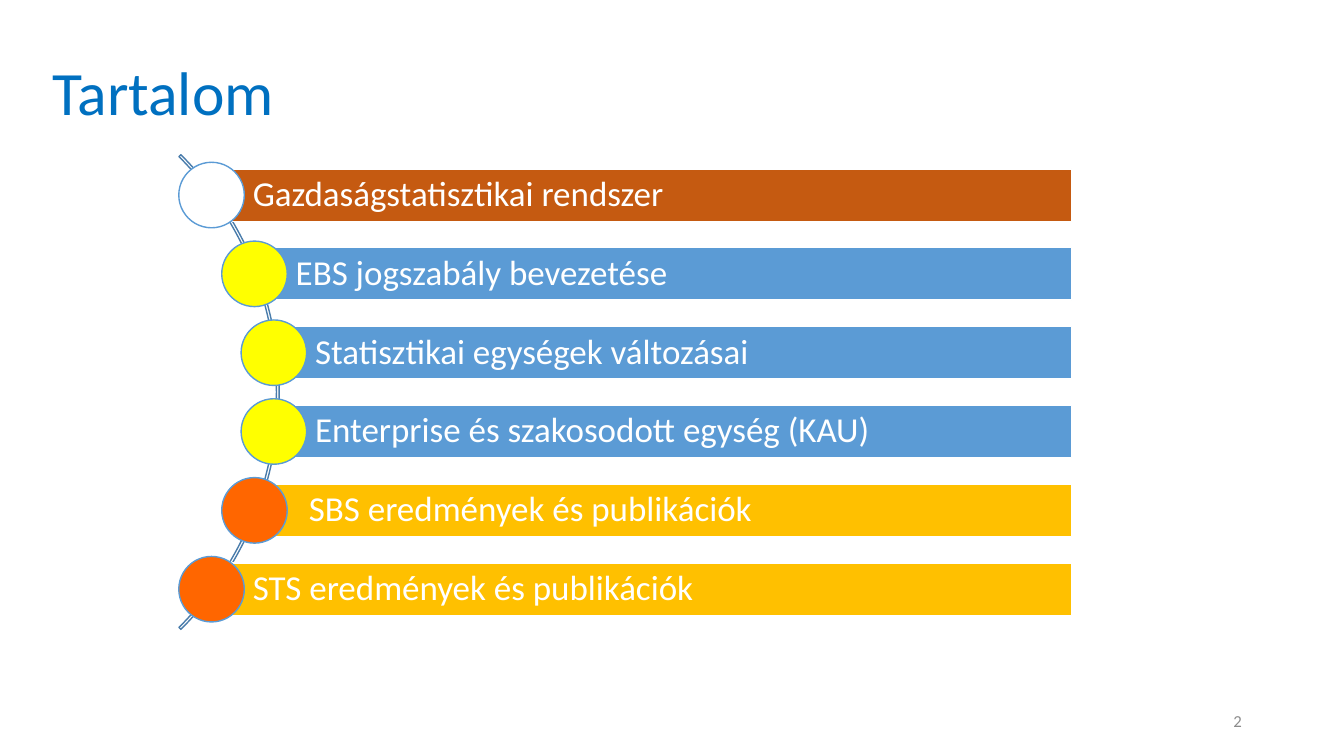
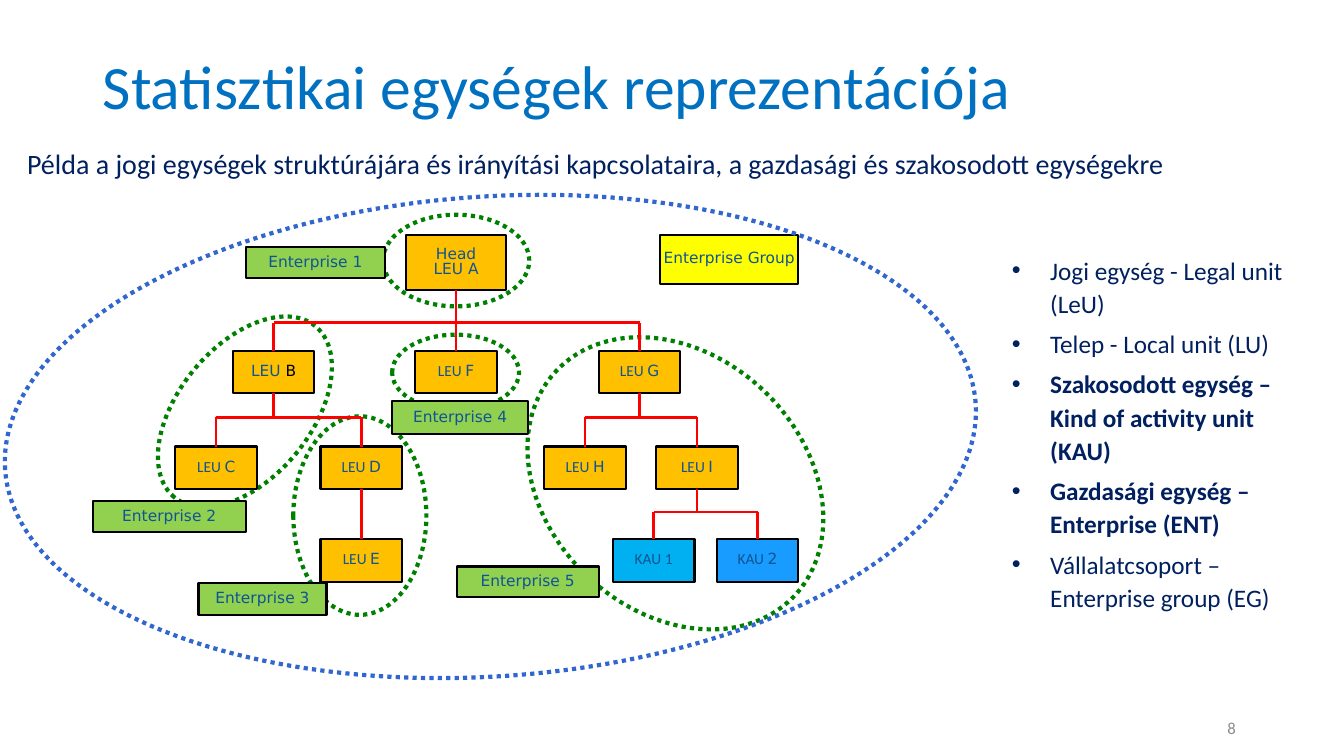
from math import sqrt

from lxml import etree
from pptx import Presentation
from pptx.dml.color import RGBColor
from pptx.enum.dml import MSO_LINE
from pptx.enum.shapes import MSO_CONNECTOR, MSO_SHAPE
from pptx.enum.text import MSO_ANCHOR, MSO_AUTO_SIZE, PP_ALIGN
from pptx.oxml.ns import qn
from pptx.util import Inches, Pt

RECT, OVAL, ARC = MSO_SHAPE.RECTANGLE, MSO_SHAPE.OVAL, MSO_SHAPE.BLOCK_ARC
STRAIGHT, DOTS = MSO_CONNECTOR.STRAIGHT, MSO_LINE.ROUND_DOT
LEFT, MID, RIGHT = PP_ALIGN.LEFT, PP_ALIGN.CENTER, PP_ALIGN.RIGHT
TOP, CENTRE = MSO_ANCHOR.TOP, MSO_ANCHOR.MIDDLE
FIXED = MSO_AUTO_SIZE.NONE

WHITE = RGBColor(0xFF, 0xFF, 0xFF)
BLACK = RGBColor(0, 0, 0)
BLUE = RGBColor(0x00, 0x70, 0xC0)
NAVY = RGBColor(0x00, 0x20, 0x60)
GREY = RGBColor(0x8C, 0x8C, 0x8C)
STEEL = RGBColor(0x49, 0x7C, 0xAB)
SKY = RGBColor(0x5B, 0x9B, 0xD5)
RUST = RGBColor(0xC5, 0x5A, 0x11)
GOLD = RGBColor(0xFF, 0xC0, 0x00)
YELLOW = RGBColor(0xFF, 0xFF, 0x00)
ORANGE = RGBColor(0xFF, 0x66, 0x00)
RED = RGBColor(0xFF, 0x00, 0x00)
GREEN = RGBColor(0x00, 0x80, 0x00)
LIME = RGBColor(0x92, 0xD0, 0x50)
INK = RGBColor(0x0F, 0x54, 0x94)
ROYAL = RGBColor(0x31, 0x66, 0xCF)
CYAN = RGBColor(0x00, 0xB0, 0xF0)
AZURE = RGBColor(0x19, 0x9C, 0xFF)

BODY, LABEL = "Calibri", "DejaVu Sans"
CELL = Inches(0.1)


def grid(*cells):
    return [round(cell * CELL) for cell in cells]


class Deck:
    def __init__(self):
        self.show = Presentation()
        self.show.slide_width, self.show.slide_height = grid(133.33, 75)
        self.slide = None

    def page(self, title, place, number, spot):
        self.slide = self.show.slides.add_slide(self.show.slide_layouts[5])
        head = self.slide.shapes.title
        head.left, head.top, head.width, head.height = grid(*place)
        self.letter(head.text_frame, title, 44, BLUE, anchor=CENTRE, lead=0.9)
        self.text(number, spot, 12, GREY, align=RIGHT, anchor=CENTRE)

    def letter(self, frame, text, size, tone, font=BODY, align=LEFT,
               anchor=TOP, lead=1.0, wrap=True):
        frame.text = text
        frame.word_wrap = wrap
        frame.auto_size = FIXED
        frame.vertical_anchor = anchor
        for para in frame.paragraphs:
            para.alignment = align
            para.line_spacing = lead
            for run in para.runs:
                self.style(run, size, tone, font)

    def style(self, run, size, tone, font):
        run.font.size = Pt(size)
        run.font.name = font
        run.font.color.rgb = tone

    def text(self, text, place, size, tone, **look):
        box = self.slide.shapes.add_textbox(*grid(*place))
        self.letter(box.text_frame, text, size, tone, **look)
        return box

    def shape(self, kind, place, fill, line, weight, turn=0):
        form = self.slide.shapes.add_shape(kind, *grid(*place))
        form.shadow.inherit = False
        form.rotation = turn
        if fill is None:
            form.fill.background()
        else:
            form.fill.solid()
            form.fill.fore_color.rgb = fill
        form.line.color.rgb = line
        form.line.width = Pt(weight)
        return form

    def ring(self, place, tone=GREEN, turn=0):
        self.shape(OVAL, place, None, tone, 3, turn).line.dash_style = DOTS

    def bar(self, text, place, fill, inset):
        form = self.shape(RECT, place, fill, WHITE, 1)
        self.letter(form.text_frame, text, 25, WHITE, anchor=CENTRE, lead=0.9)
        form.text_frame.margin_left = grid(inset)[0]

    def box(self, text, place, fill, font=LABEL, tail="", tint=INK):
        form = self.shape(RECT, place, fill, BLACK, 1.5)
        frame = form.text_frame
        frame.margin_left = frame.margin_right = Inches(0.03)
        frame.margin_top = frame.margin_bottom = Inches(0.01)
        self.letter(frame, text, 11, INK, font, MID, CENTRE, 0.8, False)
        if tail:
            run = frame.paragraphs[0].add_run()
            run.text = tail
            self.style(run, 11, tint, LABEL)
        return form

    def line(self, start, end, above=None, below=None):
        link = self.slide.shapes.add_connector(STRAIGHT, *start, *end)
        link.line.color.rgb = RED
        link.line.width = Pt(1.75)
        etree.SubElement(link._element.spPr, qn("a:effectLst"))
        if above is not None:
            link.begin_connect(above, 2)
        if below is not None:
            link.end_connect(below, 0)

    def fork(self, above, kids, row):
        level = grid(row)[0]
        stem = above.left + above.width // 2
        ends = [kid.left + kid.width // 2 for kid in kids]
        self.line((stem, above.top + above.height), (stem, level), above)
        self.line((ends[0], level), (ends[-1], level))
        for end, kid in zip(ends, kids):
            self.line((end, level), (end, kid.top), below=kid)

    def points(self, items, place):
        text = "\n".join(item for item, _ in items)
        box = self.text(text, place, 18, NAVY, lead=1.1)
        for index, para in enumerate(box.text_frame.paragraphs):
            props = para._p.get_or_add_pPr()
            props.set("marL", str(Inches(0.99)))
            props.set("indent", str(-Inches(0.38)))
            etree.SubElement(props, qn("a:buFont")).set("typeface", "Arial")
            etree.SubElement(props, qn("a:buChar")).set("char", "•")
            if index:
                para.space_before = Pt(5)
            for run in para.runs:
                run.font.bold = items[index][1]


def agenda(deck):
    deck.page("Tartalom", (4.2, 3.9, 90, 11.2), "2", (94.2, 69.5, 30, 4))
    arc = deck.shape(ARC, (-38.9, 5.6, 66.6, 66.6), None, STEEL, 1)
    for index, value in enumerate((189, 27, 0.004)):
        arc.adjustments[index] = value
    topics = [
        ("Gazdaságstatisztikai rendszer", RUST, WHITE, 0),
        ("EBS jogszabály bevezetése", SKY, YELLOW, 0),
        ("Statisztikai egységek változásai", SKY, YELLOW, 0),
        ("Enterprise és szakosodott egység (KAU)", SKY, YELLOW, 0),
        ("SBS eredmények és publikációk", GOLD, ORANGE, 1.3),
        ("STS eredmények és publikációk", GOLD, ORANGE, 0),
    ]
    hub, reach, first, pitch, edge = -5.6, 33, 19.35, 7.82, 106.3
    tall, dot = 5.2, 6.5
    for index, (text, fill, spot, push) in enumerate(topics):
        drop = (index - (len(topics) - 1) / 2) * pitch
        across = hub + sqrt(reach ** 2 - drop ** 2)
        down = first + index * pitch
        deck.bar(text, (across, down - tall / 2, edge - across, tall),
                 fill, 4.1 + push)
        deck.shape(OVAL, (across - dot / 2, down - dot / 2, dot, dot),
                   spot, SKY, 1)


def units(deck):
    deck.page("Statisztikai egységek reprezentációja", (9.2, 3.8, 96, 10.2),
              "8", (100.3, 69.6, 23.3, 5.2))
    deck.text("Példa a jogi egységek struktúrájára és irányítási "
              "kapcsolataira, a gazdasági és szakosodott egységekre",
              (1.7, 14.4, 125.5, 4.5), 20, NAVY, lead=0.9)
    for place, turn in [
        ((38, 21.3, 14.5, 9.1), 0),
        ((38.9, 33.2, 12.6, 7.5), 0),
        ((29.1, 41.3, 13.2, 19.7), 0),
        ((13.3, 34.3, 22, 13.1), 309.5),
        ((54.3, 31.7, 25.4, 32.5), 313.5),
    ]:
        deck.ring(place, turn=turn)

    deck.box("Enterprise Group", (65.5, 23.3, 13.7, 4.9), YELLOW)
    for name, place in [
        ("1", (24.4, 24.5, 13.8, 3.1)),
        ("2", (9.2, 49.7, 15.2, 3.1)),
        ("3", (19.7, 57.8, 12.7, 3.2)),
        ("4", (38.9, 39.8, 13.5, 3.3)),
        ("5", (45.3, 56.2, 14.1, 3)),
    ]:
        deck.box("Enterprise " + name, place, LIME)

    wide, tall = 8.1, 4.2
    upper, middle, lower = 34.8, 44.3, 53.5
    node = {"A": deck.box("Head\nLEU A", (40.3, 23.3, 9.9, 5.5), GOLD),
            "B": deck.box("LEU", (23.1, upper, wide, tall), GOLD,
                          tail=" B", tint=BLACK)}
    for name, left, top in [
        ("C", 17.4, middle), ("D", 31.8, middle), ("E", 31.8, lower),
        ("F", 41.2, upper), ("G", 59.4, upper), ("H", 54, middle),
        ("I", 65.1, middle),
    ]:
        node[name] = deck.box("LEU ", (left, top, wide, tall), GOLD,
                              BODY, name)
    node["1"] = deck.box("KAU 1", (60.8, lower, wide, tall), CYAN, BODY)
    node["2"] = deck.box("KAU ", (71.1, lower, wide, tall), AZURE, BODY, "2")

    for above, kids, row in [("A", "BFG", 32), ("B", "CD", 41.4),
                             ("G", "HI", 41.4), ("I", "12", 50.8)]:
        deck.fork(node[above], [node[kid] for kid in kids], row)
    deck.line((0, 0), (0, 0), node["D"], node["E"])

    deck.ring((0.4, 19.5, 96.5, 47.6), ROYAL, 356.1)
    deck.points([
        ("Jogi egység - Legal unit (LeU)", False),
        ("Telep - Local unit (LU)", False),
        ("Szakosodott egység – Kind of activity unit (KAU)", True),
        ("Gazdasági egység – Enterprise (ENT)", True),
        ("Vállalatcsoport – Enterprise group (EG)", False),
    ], (93.3, 24.5, 36.8, 34.8))


def main():
    deck = Deck()
    agenda(deck)
    units(deck)
    deck.show.save("out.pptx")


if __name__ == "__main__":
    main()
